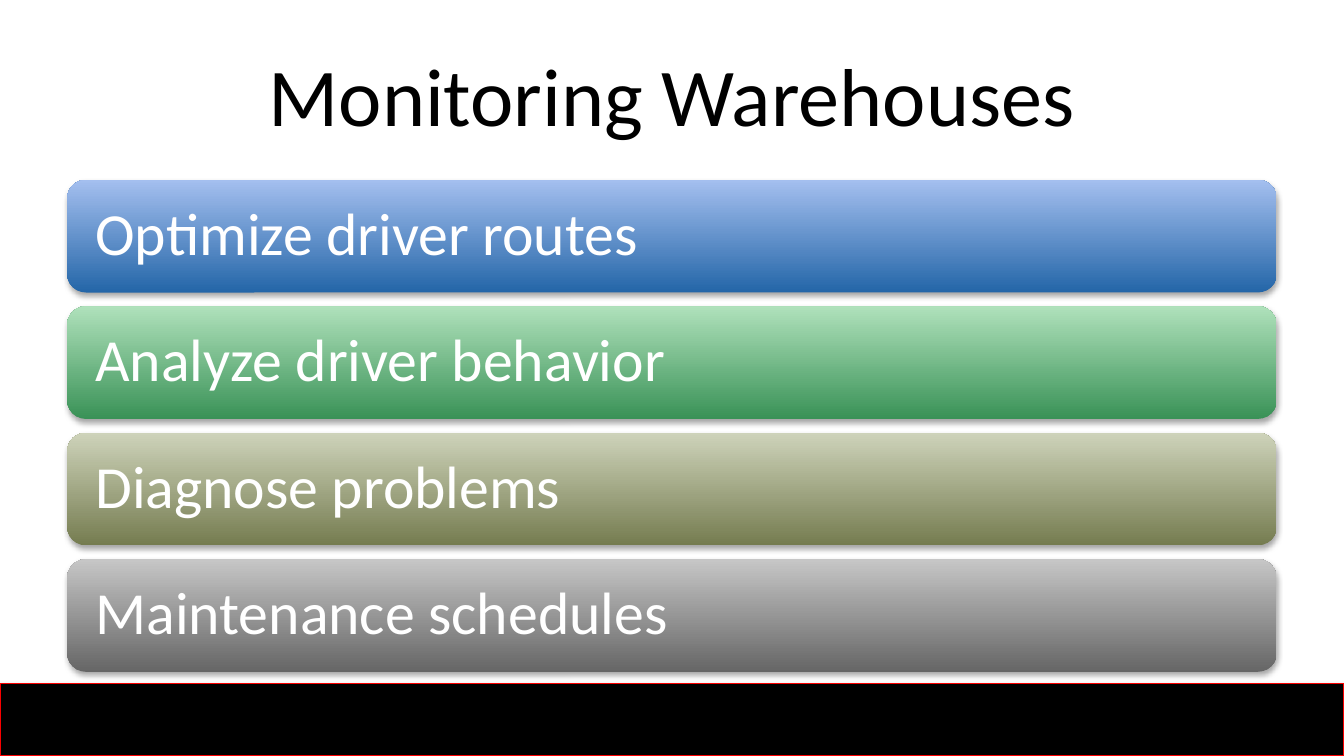
from lxml import etree
from pptx import Presentation
from pptx.dml.color import RGBColor
from pptx.enum import shapes, text
from pptx.oxml.ns import qn
from pptx.util import Cm, Pt

BLACK = RGBColor(0x00, 0x00, 0x00)
WHITE = RGBColor(0xFF, 0xFF, 0xFF)
RED = RGBColor(0xF9, 0x00, 0x00)
FONT = "Calibri"

# Label, dark colour at the bottom, light colour at the top
TASKS = [
    ("Optimize driver routes", RGBColor(0x24, 0x66, 0xA8), RGBColor(0xA4, 0xBF, 0xEF)),
    ("Analyze driver behavior", RGBColor(0x3A, 0x92, 0x57), RGBColor(0xAF, 0xE1, 0xBB)),
    ("Diagnose problems", RGBColor(0x75, 0x7C, 0x50), RGBColor(0xCE, 0xD3, 0xBA)),
    ("Maintenance schedules", RGBColor(0x66, 0x66, 0x66), RGBColor(0xC6, 0xC6, 0xC6)),
]
LEFT, WIDTH = Cm(1.27), Cm(22.86)
TOP, HEIGHT, PITCH = Cm(3.4), Cm(2.13), Cm(2.39)


def style(par, size, color, align):
    par.alignment = align
    par.font.name = FONT
    par.font.size = Pt(size)
    par.font.color.rgb = color


def shade(shape):
    """Give the shape a soft shadow straight below it."""
    shape.shadow.inherit = False
    effects = shape._element.spPr.find(qn("a:effectLst"))
    outer = etree.SubElement(
        effects, qn("a:outerShdw"), blurRad=str(Pt(3.1)), dist=str(Pt(1.8)),
        dir="5400000", rotWithShape="0")
    color = etree.SubElement(outer, qn("a:srgbClr"), val=str(BLACK))
    etree.SubElement(color, qn("a:alpha"), val="35000")


def add_title(slide, label):
    title = slide.shapes.title
    title.left, title.top, title.width, title.height = LEFT, Cm(0.58), WIDTH, Cm(2.39)
    frame = title.text_frame
    frame.text = label
    frame.vertical_anchor = text.MSO_ANCHOR.MIDDLE
    style(frame.paragraphs[0], 44, BLACK, text.PP_ALIGN.CENTER)


def add_footer(slide, width):
    bar = slide.shapes.add_shape(
        shapes.MSO_SHAPE.RECTANGLE, 0, Cm(12.92), width, Cm(1.37))
    bar.fill.solid()
    bar.fill.fore_color.rgb = BLACK
    bar.line.color.rgb = RED
    bar.line.width = Pt(0.75)
    shade(bar)


def add_task(slide, top, label, dark, light):
    box = slide.shapes.add_shape(
        shapes.MSO_SHAPE.ROUNDED_RECTANGLE, LEFT, top, WIDTH, HEIGHT)
    box.fill.gradient()
    box.fill.gradient_angle = 90
    for stop, color in zip(box.fill.gradient_stops, (dark, light)):
        stop.color.rgb = color
    box.line.fill.background()
    shade(box)

    frame = box.text_frame
    frame.word_wrap = True
    frame.vertical_anchor = text.MSO_ANCHOR.MIDDLE
    frame.margin_left = frame.margin_right = Cm(0.43)
    frame.text = label
    par = frame.paragraphs[0]
    par.line_spacing = 0.9
    style(par, 32, WHITE, text.PP_ALIGN.LEFT)


def main():
    prs = Presentation()
    prs.slide_width, prs.slide_height = Cm(25.4), Cm(14.29)
    slide = prs.slides.add_slide(prs.slide_layouts[5])  # title only

    add_footer(slide, prs.slide_width)
    add_title(slide, "Monitoring Warehouses")
    for row, task in enumerate(TASKS):
        add_task(slide, TOP + row * PITCH, *task)

    prs.save("out.pptx")


if __name__ == "__main__":
    main()
